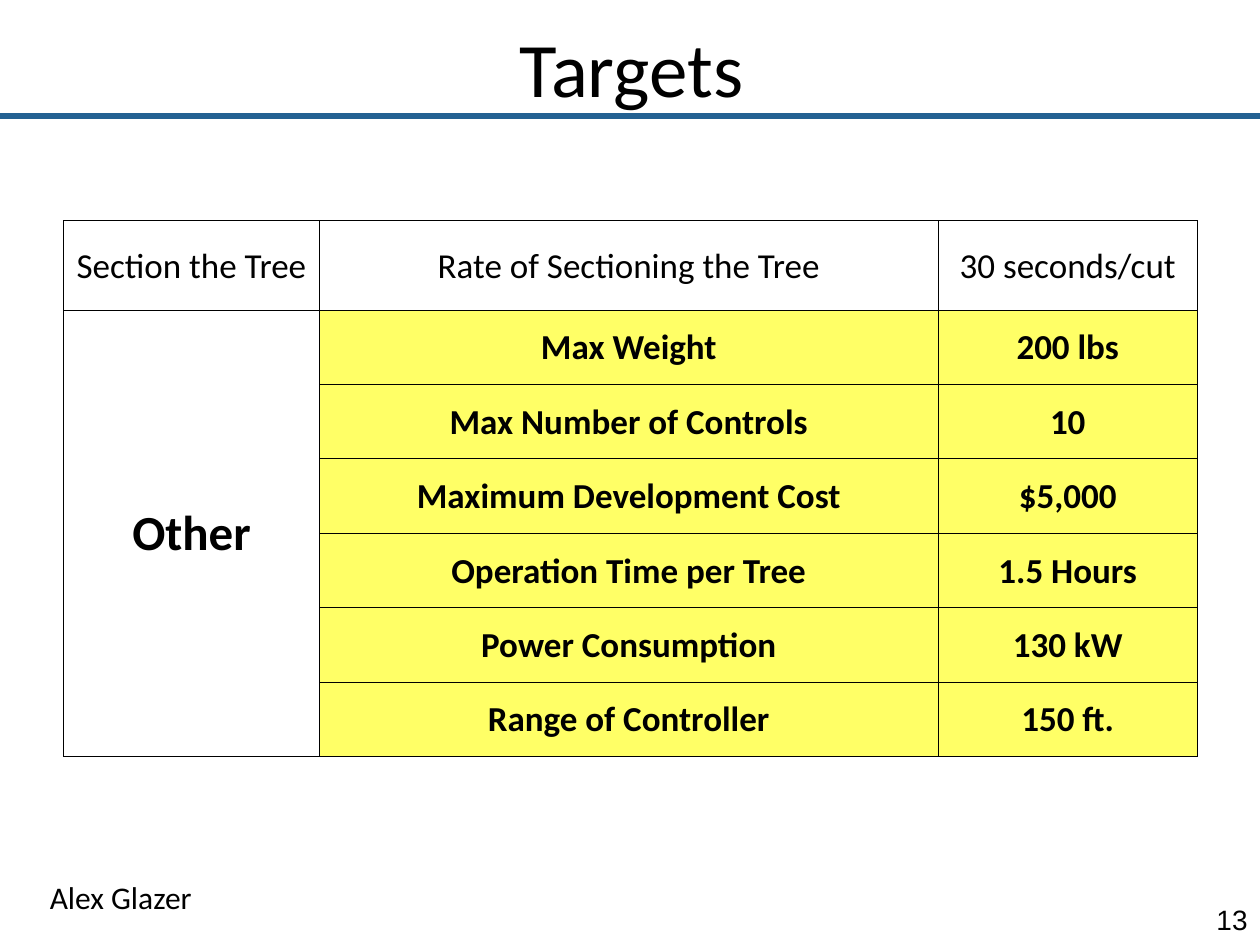
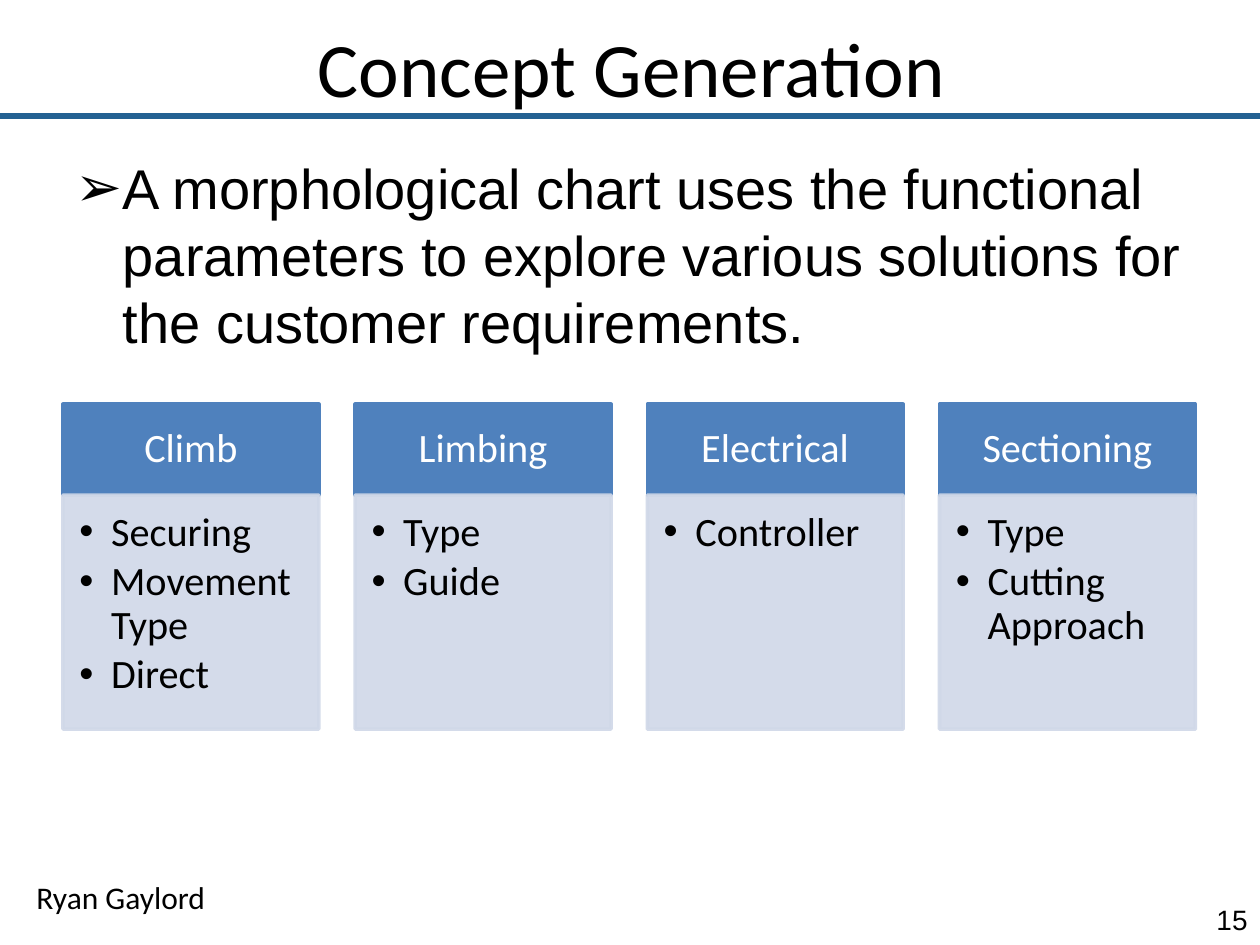
import dataclasses
import lxml.etree
import pptx
import pptx.dml.color
import pptx.enum.shapes
import pptx.enum.text
import pptx.oxml.ns
import pptx.util

Cm = pptx.util.Cm
Pt = pptx.util.Pt
qn = pptx.oxml.ns.qn
RGB = pptx.dml.color.RGBColor.from_string
ALIGN = pptx.enum.text.PP_ALIGN
ANCHOR = pptx.enum.text.MSO_ANCHOR
RECT = pptx.enum.shapes.MSO_SHAPE.RECTANGLE


@dataclasses.dataclass(frozen=True)
class Theme:
    black: str = "000000"
    white: str = "FFFFFF"
    band: str = "236192"
    mark: str = "FFFF66"
    head: str = "4F81BD"
    panel: str = "D0D8E8"
    sans: str = "Calibri"
    plain: str = "Arial"
    title: int = 44
    body: int = 32
    group: int = 28
    list: int = 23
    cell: int = 20
    name: int = 18
    page: int = 16


theme = Theme()


def write(frame, text, size, font=theme.sans, color=theme.black, bold=False,
          align=ALIGN.LEFT, anchor=ANCHOR.TOP, pad=None, bullet=None,
          indent=0, lead=None, after=0):
    frame.word_wrap = True
    frame.auto_size = pptx.enum.text.MSO_AUTO_SIZE.NONE
    frame.vertical_anchor = anchor
    if pad:
        (frame.margin_left, frame.margin_top,
         frame.margin_right, frame.margin_bottom) = [Cm(side) for side in pad]
    frame.text = text
    for para in frame.paragraphs:
        if bullet:
            props = para._p.get_or_add_pPr()
            props.set("marL", str(Cm(indent)))
            props.set("indent", str(-Cm(indent)))
            lxml.etree.SubElement(props, qn("a:buFont"), typeface=theme.plain)
            lxml.etree.SubElement(props, qn("a:buChar"), char=bullet)
        para.alignment = align
        para.space_before = Pt(0)
        para.space_after = Pt(after)
        if lead:
            para.line_spacing = lead
        para.font.size = Pt(size)
        para.font.name = font
        para.font.bold = bold
        para.font.color.rgb = RGB(color)


deck = pptx.Presentation()
deck.slide_width = Cm(25.4)
deck.slide_height = Cm(19.05)

pages = [
    ("Targets", "Alex Glazer", "13", 5),
    ("Concept Generation", "Ryan Gaylord", "15", 1),
]
for title, name, page, layout in pages:
    slide = deck.slides.add_slide(deck.slide_layouts[layout])
    band = slide.shapes.add_connector(
        pptx.enum.shapes.MSO_CONNECTOR.STRAIGHT, 0, Cm(2.34), Cm(25.4), Cm(2.34))
    band.line.color.rgb = RGB(theme.band)
    band.line.width = Pt(3.5)
    lxml.etree.SubElement(band._element.spPr, qn("a:effectLst"))

    head = slide.shapes.title
    head.left, head.top, head.width, head.height = Cm(1.3), Cm(0.2), Cm(22.86), Cm(1.7)
    write(head.text_frame, title, theme.title, align=ALIGN.CENTER,
          pad=(0.25, 0.22, 0.25, 0.13))

    box = slide.shapes.add_textbox(Cm(0.43), Cm(17.58), Cm(4.01), Cm(1.02))
    write(box.text_frame, name, theme.name, align=ALIGN.CENTER)
    box = slide.shapes.add_textbox(Cm(24.13), Cm(18.03), Cm(1.27), Cm(1.02))
    write(box.text_frame, page, theme.page, font=theme.plain,
          align=ALIGN.RIGHT, anchor=ANCHOR.MIDDLE)

targets, concept = deck.slides

rows = [
    ("Section the Tree", "Rate of Sectioning the Tree", "30 seconds/cut"),
    ("Other", "Max Weight", "200 lbs"),
    ("", "Max Number of Controls", "10"),
    ("", "Maximum Development Cost", "$5,000"),
    ("", "Operation Time per Tree", "1.5 Hours"),
    ("", "Power Consumption", "130 kW"),
    ("", "Range of Controller", "150 ft."),
]
table = targets.shapes.add_table(
    len(rows), 3, Cm(1.28), Cm(4.45), Cm(22.86), Cm(10.8)).table
table.first_row = False
table.horz_banding = False
for col, width in zip(table.columns, (5.16, 12.47, 5.23)):
    col.width = Cm(width)
for r, row in enumerate(rows):
    table.rows[r].height = Cm(1.5 if r else 1.8)
    for c, text in enumerate(row):
        cell = table.cell(r, c)
        cell.vertical_anchor = ANCHOR.MIDDLE
        cell.margin_left = cell.margin_right = cell.margin_top = Cm(0.03)
        cell.margin_bottom = 0
        if r and c:
            cell.fill.solid()
            cell.fill.fore_color.rgb = RGB(theme.mark)
        else:
            cell.fill.background()
        props = cell._tc.get_or_add_tcPr()
        for i, side in enumerate(("a:lnL", "a:lnR", "a:lnT", "a:lnB")):
            edge = lxml.etree.Element(qn(side), w=str(Pt(0.5)))
            fill = lxml.etree.SubElement(edge, qn("a:solidFill"))
            lxml.etree.SubElement(fill, qn("a:srgbClr"), val=theme.black)
            props.insert(i, edge)
        if text:
            cell.text = text
            para = cell.text_frame.paragraphs[0]
            para.alignment = ALIGN.CENTER
            para.font.name = theme.sans
            para.font.size = Pt(theme.group if r and not c else theme.cell)
            para.font.bold = r > 0
            para.font.color.rgb = RGB(theme.black)
table.cell(1, 0).merge(table.cell(len(rows) - 1, 0))

body = concept.placeholders[1]
body.left, body.top, body.width, body.height = Cm(1.27), Cm(2.97), Cm(22.86), Cm(13.34)
write(body.text_frame,
      "A morphological chart uses the functional parameters to explore "
      "various solutions for the customer requirements.",
      theme.body, font=theme.plain, bullet="➢", indent=0.95, lead=Pt(38.3))

groups = [
    ("Climb", "Securing\nMovement Type\nDirect"),
    ("Limbing", "Type\nGuide"),
    ("Electrical", "Controller"),
    ("Sectioning", "Type\nCutting Approach"),
]
for i, (label, items) in enumerate(groups):
    left = Cm(1.27 + 5.89 * i)
    head = concept.shapes.add_shape(RECT, left, Cm(8.15), Cm(5.16), Cm(1.83))
    panel = concept.shapes.add_shape(RECT, left, Cm(9.98), Cm(5.16), Cm(4.72))
    for shape, color in ((head, theme.head), (panel, theme.panel)):
        shape.shadow.inherit = False
        shape.fill.solid()
        shape.fill.fore_color.rgb = RGB(color)
        shape.line.color.rgb = RGB(color)
        shape.line.width = Pt(2)
    for tint in panel._element.spPr.iter(qn("a:srgbClr")):
        lxml.etree.SubElement(tint, qn("a:alpha"), val="90000")
    write(head.text_frame, label, theme.list, color=theme.white,
          align=ALIGN.CENTER, anchor=ANCHOR.MIDDLE,
          pad=(0.46, 0.25, 0.46, 0.25), lead=0.9)
    write(panel.text_frame, items, theme.list, pad=(0.33, 0.33, 0.46, 0.5),
          bullet="•", indent=0.64, lead=0.9, after=3.45)

deck.save("out.pptx")
